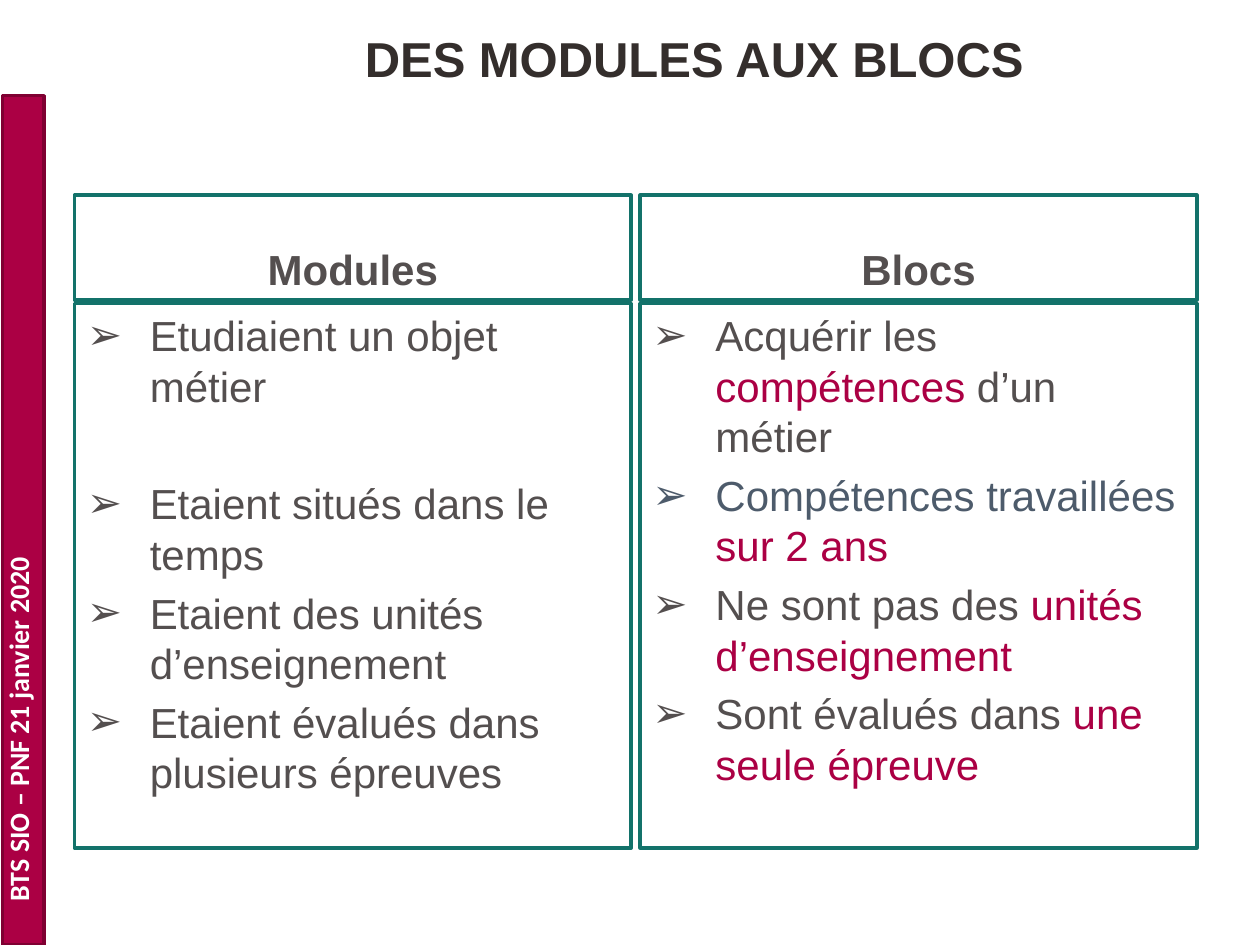
"""Build the slide comparing modules with blocks."""
from lxml.etree import SubElement
from pptx import Presentation
from pptx.dml.color import RGBColor
from pptx.enum.shapes import MSO_SHAPE
from pptx.enum.text import MSO_ANCHOR, PP_ALIGN
from pptx.oxml.ns import qn
from pptx.util import Inches, Pt

WHITE = RGBColor(0xFF, 0xFF, 0xFF)
CRIMSON = RGBColor(0xAB, 0x00, 0x44)
WINE = RGBColor(0x7F, 0x00, 0x32)
TEAL = RGBColor(0x13, 0x72, 0x6A)
DARK = RGBColor(0x34, 0x2E, 0x2C)
GREY = RGBColor(0x54, 0x4F, 0x4F)
SLATE = RGBColor(0x4D, 0x5B, 0x6B)

prs = Presentation()
prs.slide_width, prs.slide_height = Inches(10), Inches(7.5)
s = prs.slides.add_slide(prs.slide_layouts[6])


def write(sp, paragraphs, size=24, font="Arial", color=GREY, bold=False,
          align=PP_ALIGN.LEFT, anchor=MSO_ANCHOR.TOP, bullet=None, gaps=()):
    tf = sp.text_frame
    tf.word_wrap = True
    tf.vertical_anchor = anchor
    for i, runs in enumerate(paragraphs):
        p = tf.paragraphs[0] if i == 0 else tf.add_paragraph()
        p.alignment = align
        if i:
            p.space_before = Pt(gaps[i - 1])
        if bullet:
            pPr = p._p.get_or_add_pPr()
            pPr.set("marL", str(Inches(0.5)))
            pPr.set("indent", str(-Inches(0.5)))
            SubElement(pPr, qn("a:buFont")).set("typeface", "Arial")
            SubElement(pPr, qn("a:buChar")).set("char", bullet)
        for text, tint in runs:
            r = p.add_run()
            r.text = text
            r.font.name, r.font.size, r.font.bold = font, Pt(size), bold
            r.font.color.rgb = tint or color


def box(left, top, width, height, line, fill=None):
    sp = s.shapes.add_shape(MSO_SHAPE.RECTANGLE, Inches(left), Inches(top),
                            Inches(width), Inches(height))
    sp.shadow.inherit = False
    if fill is None:
        sp.fill.background()
    else:
        sp.fill.solid()
        sp.fill.fore_color.rgb = fill
    sp.line.color.rgb = line
    sp.line.width = Pt(2)
    return sp


box(0.02, 0.76, 0.33, 6.74, WINE, CRIMSON)
side = s.shapes.add_textbox(Inches(-0.04), Inches(0.35), Inches(0.47), Inches(6.9))
side.text_frame._txBody.bodyPr.set("vert", "vert270")
write(side, [[("BTS SIO – PNF 21 janvier 2020", None)]],
      size=16, font="Calibri", color=WHITE, bold=True)

title = s.shapes.add_textbox(Inches(1.01), 0, Inches(9), Inches(0.92))
write(title, [[("DES MODULES AUX BLOCS", None)]], size=28, color=DARK, bold=True,
      align=PP_ALIGN.CENTER, anchor=MSO_ANCHOR.MIDDLE)

LEFT, PITCH, WIDTH = 0.59, 4.49, 4.42
columns = [
    ("Modules", (38.4, 4.8, 4.8), [
        [("Etudiaient un objet métier", None)],
        [("Etaient situés dans le temps", None)],
        [("Etaient des unités d’enseignement", None)],
        [("Etaient évalués dans plusieurs épreuves", None)]]),
    ("Blocs", (4.8, 4.8, 4.8), [
        [("Acquérir les ", None), ("compétences", CRIMSON), (" d’un métier", None)],
        [("Compétences travaillées ", SLATE), ("sur 2 ans", CRIMSON)],
        [("Ne sont pas des ", None), ("unités d’enseignement", CRIMSON)],
        [("Sont évalués dans ", None), ("une seule épreuve", CRIMSON)]]),
]
for col, (heading, gaps, points) in enumerate(columns):
    x = LEFT + col * PITCH
    write(box(x, 1.55, WIDTH, 0.83, TEAL), [[(heading, None)]], bold=True,
          align=PP_ALIGN.CENTER, anchor=MSO_ANCHOR.BOTTOM)
    write(box(x, 2.41, WIDTH, 4.32, TEAL), points, bullet="➢", gaps=gaps)

prs.save("out.pptx")
